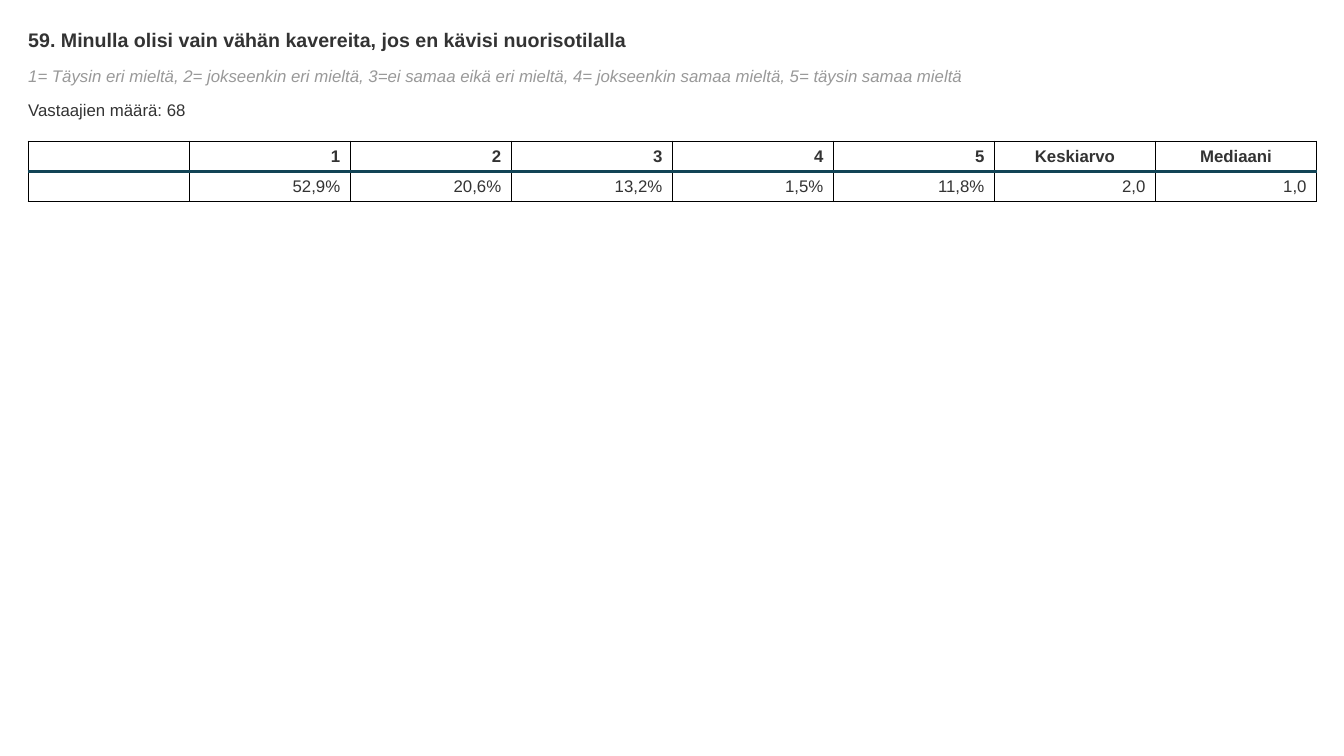
from lxml import etree
from pptx import Presentation
from pptx.dml.color import RGBColor
from pptx.enum.text import MSO_ANCHOR, MSO_AUTO_SIZE, PP_ALIGN
from pptx.oxml.ns import qn
from pptx.util import Pt

PX = 9144
FONT = "Arial"
LEFT, WIDTH = 28, 1278
ROW_HEIGHT = 30
TOP, MIDDLE = MSO_ANCHOR.TOP, MSO_ANCHOR.MIDDLE
NO_FIT = MSO_AUTO_SIZE.NONE
ALIGN_LEFT, ALIGN_CENTER, ALIGN_RIGHT = PP_ALIGN.LEFT, PP_ALIGN.CENTER, PP_ALIGN.RIGHT
COLORS = {"text": "333333", "muted": "999999", "grid": "000000", "rule": "124456"}
RESULTS = [
    ["", "1", "2", "3", "4", "5", "Keskiarvo", "Mediaani"],
    ["", "52,9%", "20,6%", "13,2%", "1,5%", "11,8%", "2,0", "1,0"],
]


def style_paragraph(para, size=12, color="text", bold=False, italic=False, align=ALIGN_LEFT):
    """Set the font and alignment of one paragraph."""
    para.alignment = align
    font = para.font
    font.name, font.size, font.bold, font.italic = FONT, Pt(size), bold, italic
    font.color.rgb = RGBColor.from_string(COLORS[color])


def fill_line(box, text, top, height, **style):
    """Place a box across the page and write one line of text in it."""
    box.left, box.top, box.width, box.height = (
        length * PX for length in (LEFT, top, WIDTH, height))
    frame = box.text_frame
    frame.margin_left = frame.margin_right = frame.margin_top = frame.margin_bottom = 0
    frame.word_wrap = True
    frame.auto_size = NO_FIT
    frame.vertical_anchor = TOP
    frame.text = text
    style_paragraph(frame.paragraphs[0], **style)


def add_line(page, text, top, height, **style):
    """Add a text box that holds one line."""
    fill_line(page.shapes.add_textbox(0, 0, 0, 0), text, top, height, **style)


def set_borders(cell, rule_side):
    """Draw the grid around a cell, with the heavier rule on one side."""
    properties = cell._tc.get_or_add_tcPr()
    for index, side in enumerate(("lnL", "lnR", "lnT", "lnB")):
        weight, color = (2, "rule") if side == rule_side else (1, "grid")
        line = etree.Element(qn(f"a:{side}"), w=str(Pt(weight)))
        fill = etree.SubElement(line, qn("a:solidFill"))
        etree.SubElement(fill, qn("a:srgbClr"), val=COLORS[color])
        properties.insert(index, line)


def add_results(page, top):
    """Add the table of answer shares, mean and median."""
    row_count, column_count = len(RESULTS), len(RESULTS[0])
    table = page.shapes.add_table(
        row_count, column_count, LEFT * PX, top * PX,
        WIDTH * PX, row_count * ROW_HEIGHT * PX).table
    table.first_row = table.horz_banding = False
    for row, values in enumerate(RESULTS):
        header = row == 0
        for column, value in enumerate(values):
            cell = table.cell(row, column)
            cell.text = value
            cell.margin_top = cell.margin_bottom = 0
            cell.vertical_anchor = MIDDLE
            cell.fill.background()
            set_borders(cell, "lnB" if header else "lnT")
            centered = header and value.isalpha()
            style_paragraph(cell.text_frame.paragraphs[0], bold=header,
                            align=ALIGN_CENTER if centered else ALIGN_RIGHT)


def main():
    """Build the survey question page and save the deck."""
    deck = Presentation()
    deck.slide_width, deck.slide_height = 1333 * PX, 750 * PX
    page = deck.slides.add_slide(deck.slide_layouts[5])
    fill_line(page.shapes.title,
              "59. Minulla olisi vain vähän kavereita, jos en kävisi nuorisotilalla",
              28, 23, size=14, bold=True)
    add_line(page,
             "1= Täysin eri mieltä, 2= jokseenkin eri mieltä, 3=ei samaa eikä eri mieltä, "
             "4= jokseenkin samaa mieltä, 5= täysin samaa mieltä",
             65, 20, color="muted", italic=True)
    add_line(page, "Vastaajien määrä: 68", 99, 20)
    add_results(page, 140)
    deck.save("out.pptx")


if __name__ == "__main__":
    main()
